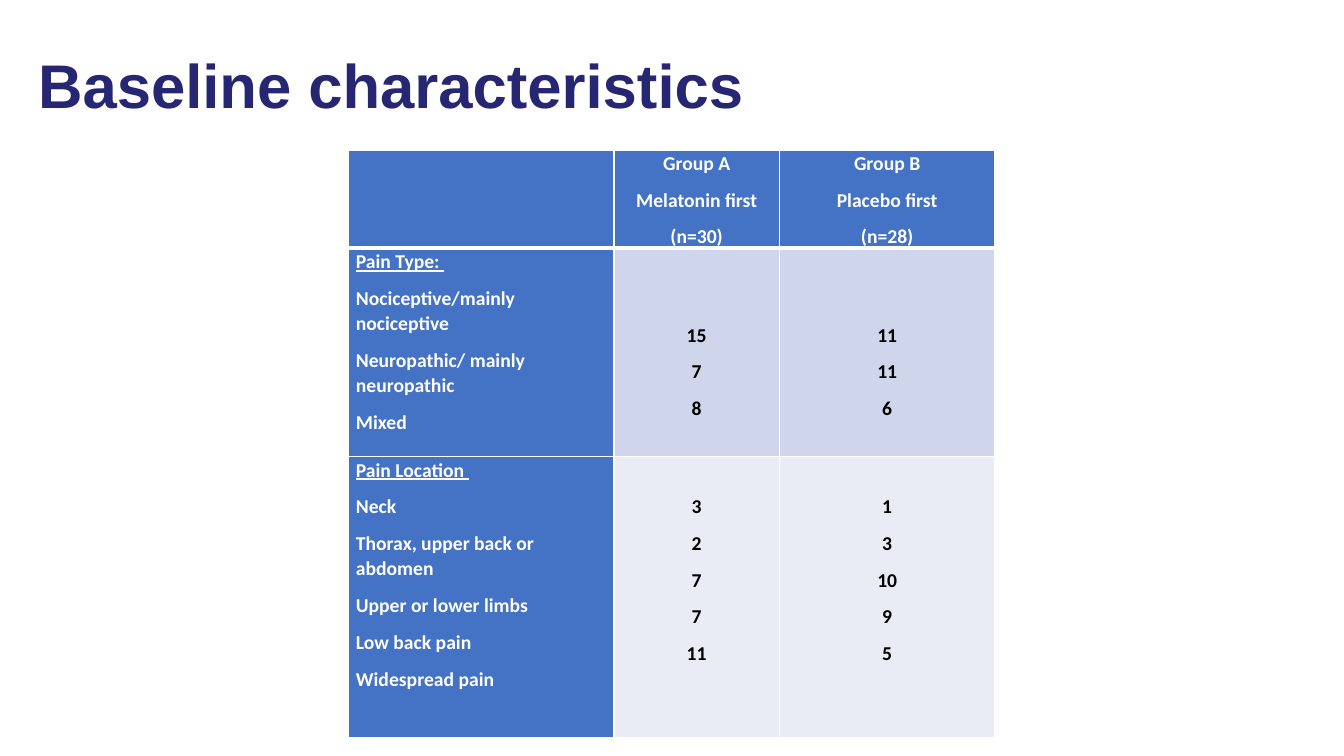
"""Build the baseline characteristics slide with its table of pain groups."""
from lxml import etree
from pptx import Presentation
from pptx import util as u
from pptx.dml.color import RGBColor
from pptx.enum import text
from pptx.oxml import ns

NAVY = RGBColor(0x26, 0x26, 0x73)
BLUE = RGBColor(0x44, 0x72, 0xC4)
PALE_BLUE = RGBColor(0xCF, 0xD5, 0xEA)
PALEST_BLUE = RGBColor(0xE9, 0xEB, 0xF5)
WHITE = RGBColor(0xFF, 0xFF, 0xFF)
BLACK = RGBColor(0, 0, 0)

COLUMN_WIDTHS = [2.63, 1.64, 2.14]
ROW_HEIGHTS = [0.97, 2.07, 2.79]
LINE_PITCH = 0.365
LINES_ABOVE_VALUES = [0, 2, 1]
VALUE_FILLS = [BLUE, PALE_BLUE, PALEST_BLUE]
ROWS = [
    [
        [],
        ["Group A", "Melatonin first", "(n=30)"],
        ["Group B", "Placebo first", "(n=28)"],
    ],
    [
        ["Pain Type: ", "Nociceptive/mainly nociceptive",
         "Neuropathic/ mainly neuropathic", "Mixed"],
        ["15", "7", "8"],
        ["11", "11", "6"],
    ],
    [
        ["Pain Location ", "Neck", "Thorax, upper back or abdomen",
         "Upper or lower limbs", "Low back pain", "Widespread pain"],
        ["3", "2", "7", "7", "11"],
        ["1", "3", "10", "9", "5"],
    ],
]


def add_run(para, wording, font_name, size, color):
    span = para.add_run()
    span.text = wording
    span.font.name = font_name
    span.font.size = u.Pt(size)
    span.font.bold = True
    span.font.color.rgb = color
    return span


def add_border(cell, side, width):
    line = etree.SubElement(cell._tc.get_or_add_tcPr(), ns.qn(f"a:ln{side}"), w=str(u.Pt(width)))
    fill = etree.SubElement(line, ns.qn("a:solidFill"))
    etree.SubElement(fill, ns.qn("a:srgbClr"), val=str(WHITE))


deck = Presentation()
deck.slide_width = u.Inches(13.33)
deck.slide_height = u.Inches(7.5)
page = deck.slides.add_slide(deck.slide_layouts[6])

title_box = page.shapes.add_textbox(u.Inches(0.28), u.Inches(0.15), u.Inches(11.5), u.Inches(1.45))
title_box.text_frame.word_wrap = True
title_box.text_frame.vertical_anchor = text.MSO_ANCHOR.MIDDLE
title = title_box.text_frame.paragraphs[0]
title.line_spacing = 0.9
add_run(title, "Baseline characteristics", "Arial", 44, NAVY)

table = page.shapes.add_table(
    len(ROWS), len(COLUMN_WIDTHS), u.Inches(3.46), u.Inches(1.49),
    u.Inches(sum(COLUMN_WIDTHS)), u.Inches(sum(ROW_HEIGHTS))).table
for column, width in zip(table.columns, COLUMN_WIDTHS):
    column.width = u.Inches(width)
for row, height in zip(table.rows, ROW_HEIGHTS):
    row.height = u.Inches(height)

for row_index, row in enumerate(ROWS):
    for column_index, lines in enumerate(row):
        is_label = column_index == 0
        is_header = row_index == 0
        cell = table.cell(row_index, column_index)
        cell.margin_left = cell.margin_right = u.Inches(0.07)
        cell.margin_bottom = 0
        cell.margin_top = u.Inches(0 if is_label else LINES_ABOVE_VALUES[row_index] * LINE_PITCH)
        add_border(cell, "L", 1)
        add_border(cell, "R", 1)
        add_border(cell, "T", 3 if row_index == 1 else 1)
        add_border(cell, "B", 3 if is_header else 1)
        cell.fill.solid()
        cell.fill.fore_color.rgb = BLUE if is_label else VALUE_FILLS[row_index]
        for line_index, wording in enumerate(lines):
            frame = cell.text_frame
            para = frame.add_paragraph() if line_index else frame.paragraphs[0]
            para.alignment = text.PP_ALIGN.LEFT if is_label else text.PP_ALIGN.CENTER
            para.line_spacing = 1.07
            para.space_after = u.Pt(8)
            color = WHITE if is_label or is_header else BLACK
            span = add_run(para, wording, "Calibri", 14, color)
            span.font.underline = is_label and line_index == 0

deck.save("out.pptx")
